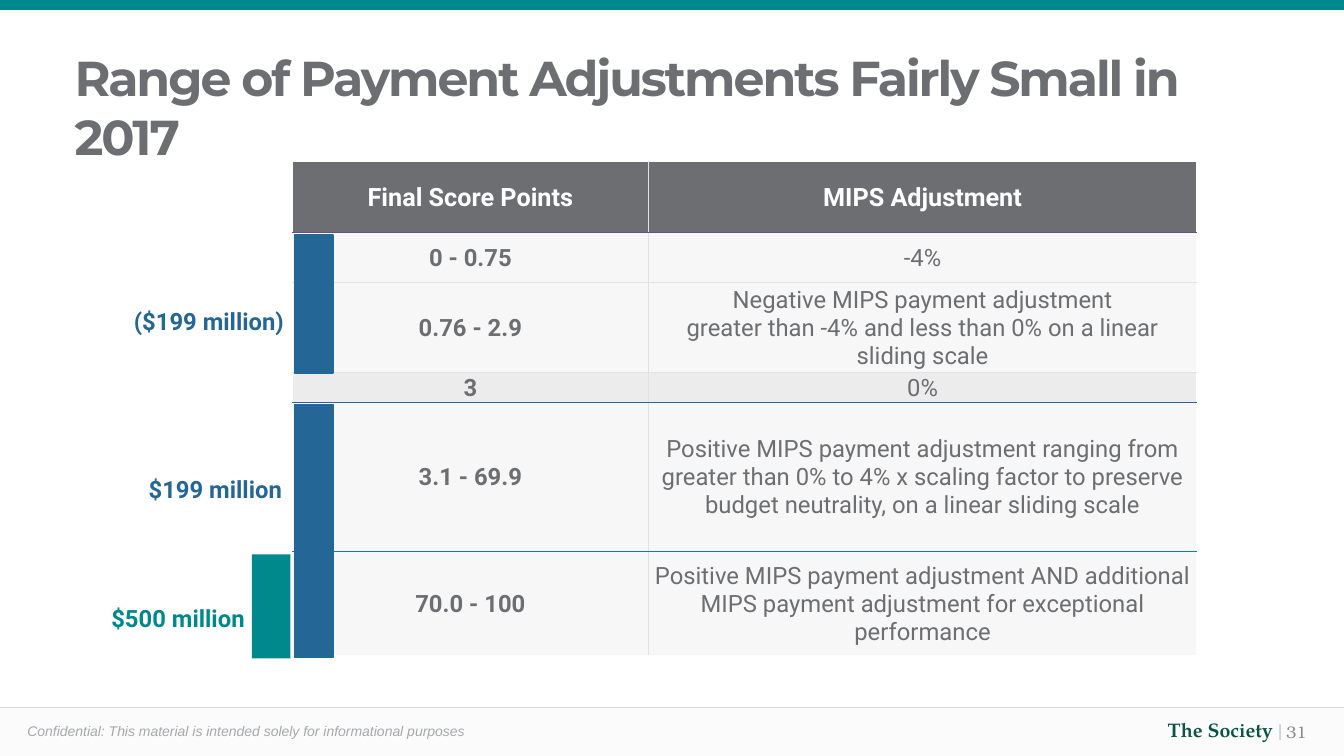
import pptx
import pptx.util
import pptx.dml.color
import pptx.enum.shapes
import pptx.enum.text
from lxml import etree
from pptx.oxml import ns

Cm, Pt = pptx.util.Cm, pptx.util.Pt
ALIGN = pptx.enum.text.PP_ALIGN
ANCHOR = pptx.enum.text.MSO_ANCHOR

COLORS = {
    "white": "FFFFFF", "teal": "00898D", "blue": "246797", "gray": "6D6E71",
    "pale": "F7F7F7", "neutral": "ECECED", "grid": "E2E2E3", "violet": "664F8A",
    "footer": "FBFBFB", "rule": "D9D9D9", "notice": "A7A8AA",
    "name": "0A5540", "divider": "AFAFB3", "number": "898989",
}
WIDTH, HEIGHT = 33.87, 19.05
FOOTER_TOP = 17.83
COLUMN_WIDTHS = [8.97, 13.82]

# Score points, adjustment, row height, fill, colour of the line below
SCORE_ROWS = [
    ("Final Score Points", "MIPS Adjustment", 1.8, "gray", "violet"),
    ("0 - 0.75", "-4%", 1.27, "pale", "grid"),
    ("0.76 - 2.9", "Negative MIPS payment adjustment\n"
     "greater than -4% and less than 0% on a linear sliding scale", 2.26, "pale", "grid"),
    ("3", "0%", 0.71, "neutral", "blue"),
    ("3.1 - 69.9", "Positive MIPS payment adjustment ranging from\n"
     "greater than 0% to 4% x scaling factor to preserve budget neutrality, "
     "on a linear sliding scale", 3.76, "pale", "teal"),
    ("70.0 - 100", "Positive MIPS payment adjustment AND additional "
     "MIPS payment adjustment for exceptional performance", 2.62, "pale", "white"),
]

# Text, right edge, top, colour
AMOUNTS = [
    ("($199 million)", 7.16, 7.72, "blue"),
    ("$199 million", 7.11, 11.96, "blue"),
    ("$500 million", 6.17, 15.21, "teal"),
]

# Left, top, height, colour, outline
BARS = [
    (6.35, 13.97, 2.62, "teal", None),
    (7.42, 10.19, 6.38, "blue", "blue"),
    (7.42, 5.92, 3.48, "blue", "blue"),
]


def rgb(color):
    return pptx.dml.color.RGBColor.from_string(COLORS[color])


def write(paragraph, text, size=17, font="Roboto", color="gray", bold=False,
          italic=False, spacing=None, align=ALIGN.LEFT):
    paragraph.alignment = align
    for index, line in enumerate(text.split("\n")):
        if index:
            paragraph.add_line_break()
        run = paragraph.add_run()
        run.text = line
        run.font.size, run.font.name = Pt(size), font
        run.font.bold, run.font.italic = bold, italic
        run.font.color.rgb = rgb(color)
        if spacing is not None:
            run.font._element.set("spc", str(round(spacing * 100)))


def add_text_area(slide, left, top, width, height, inset=True, wrap=True, anchor=ANCHOR.TOP):
    frame = slide.shapes.add_textbox(Cm(left), Cm(top), Cm(width), Cm(height)).text_frame
    frame.word_wrap = wrap
    frame.vertical_anchor = anchor
    if not inset:
        frame.margin_left = frame.margin_right = frame.margin_top = frame.margin_bottom = 0
    return frame.paragraphs[0]


def add_block(slide, left, top, width, height, color, outline=None):
    block = slide.shapes.add_shape(pptx.enum.shapes.MSO_SHAPE.RECTANGLE,
                                   Cm(left), Cm(top), Cm(width), Cm(height))
    block.shadow.inherit = False
    block.fill.solid()
    block.fill.fore_color.rgb = rgb(color)
    if outline:
        block.line.color.rgb = rgb(outline)
        block.line.width = Pt(1)
    else:
        block.line.fill.background()


def add_rule(slide, top):
    rule = slide.shapes.add_connector(pptx.enum.shapes.MSO_CONNECTOR.STRAIGHT,
                                      0, Cm(top), Cm(WIDTH), Cm(top))
    rule.line.color.rgb = rgb("rule")
    rule.line.width = Pt(1)
    etree.SubElement(rule._element.spPr, ns.qn("a:effectLst"))


def set_borders(cell, **sides):
    properties = cell._tc.get_or_add_tcPr()
    for side in "LRTB":
        color = sides[side]
        points = 0.75 if color == "grid" else 1
        border = etree.SubElement(properties, ns.qn("a:ln" + side), w=str(Pt(points)))
        fill = etree.SubElement(border, ns.qn("a:solidFill"))
        etree.SubElement(fill, ns.qn("a:srgbClr"), val=COLORS[color])


def add_score_table(slide):
    heights = [row[2] for row in SCORE_ROWS]
    table = slide.shapes.add_table(len(SCORE_ROWS), len(COLUMN_WIDTHS), Cm(7.37), Cm(4.06),
                                   Cm(sum(COLUMN_WIDTHS)), Cm(sum(heights))).table
    table.horz_banding = False
    for column, width in zip(table.columns, COLUMN_WIDTHS):
        column.width = Cm(width)
    line_above = "white"
    for r, (points, adjustment, height, fill, line_below) in enumerate(SCORE_ROWS):
        table.rows[r].height = Cm(height)
        header = r == 0
        for c, text in enumerate((points, adjustment)):
            cell = table.cell(r, c)
            cell.margin_left = cell.margin_right = cell.margin_top = Cm(0.03)
            cell.margin_bottom = 0
            cell.vertical_anchor = ANCHOR.MIDDLE
            set_borders(cell, L="grid" if c else "white", R="white" if c else "grid",
                        T=line_above, B=line_below)
            cell.fill.solid()
            cell.fill.fore_color.rgb = rgb(fill)
            write(cell.text_frame.paragraphs[0], text, size=18 if header else 17,
                  color="white" if header else "gray", bold=header or c == 0,
                  align=ALIGN.CENTER)
        line_above = line_below


def add_footer(slide):
    add_block(slide, 0, FOOTER_TOP, WIDTH, HEIGHT - FOOTER_TOP, "footer")
    add_rule(slide, FOOTER_TOP)
    write(add_text_area(slide, 0.69, 18.21, 21.79, 0.43, inset=False),
          "Confidential: This material is intended solely for informational purposes",
          size=10, font="Arial", color="notice", italic=True)
    publisher = add_text_area(slide, 26.39, 17.96, 6.17, 0.86)
    write(publisher, "The Society ", size=14, font="TeX Gyre Pagella", color="name",
          bold=True, align=ALIGN.RIGHT)
    write(publisher, "|", size=14, font="TeX Gyre Pagella", color="divider",
          align=ALIGN.RIGHT)
    write(add_text_area(slide, 32.16, 17.93, 1.12, 1.02, wrap=False, anchor=ANCHOR.MIDDLE),
          "31", size=12, font="TeX Gyre Bonum", color="number")


def main():
    deck = pptx.Presentation()
    deck.slide_width, deck.slide_height = Cm(WIDTH), Cm(HEIGHT)
    slide = deck.slides.add_slide(deck.slide_layouts[6])

    # Frame of the slide
    add_footer(slide)
    add_block(slide, 0, 0, WIDTH, 0.25, "teal")

    # Title
    write(add_text_area(slide, 1.63, 1.07, 30.51, 3.1),
          "Range of Payment Adjustments Fairly Small in 2017",
          size=35, font="Montserrat", bold=True, spacing=-1.5)

    # Scores, with the amounts and bars beside them
    add_score_table(slide)
    for text, right, top, color in AMOUNTS:
        write(add_text_area(slide, right - 4.5, top, 4.5, 0.74, inset=False), text,
              color=color, bold=True, align=ALIGN.RIGHT)
    for left, top, height, color, outline in BARS:
        add_block(slide, left, top, 0.97, height, color, outline)

    deck.save("out.pptx")


if __name__ == "__main__":
    main()
